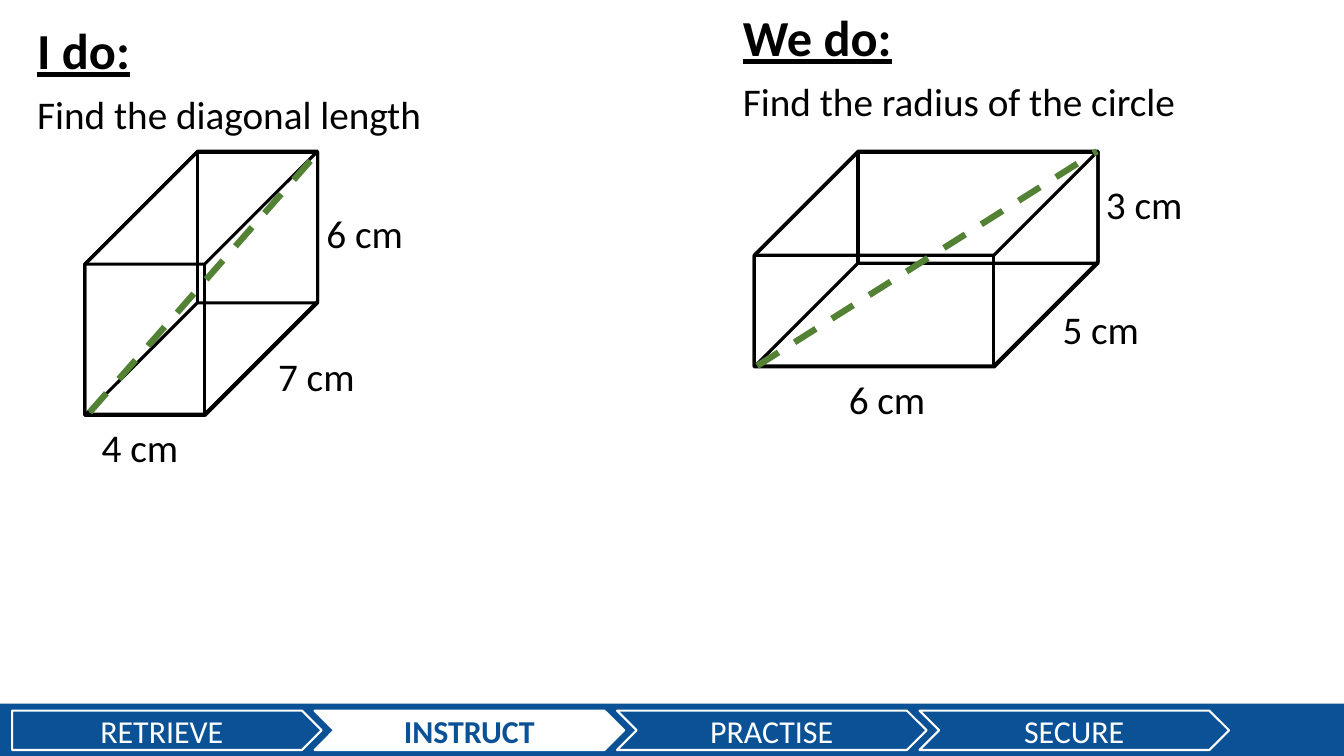
from dataclasses import dataclass

import pptx
import pptx.dml.color
import pptx.enum.dml
import pptx.enum.shapes
import pptx.enum.text
import pptx.util
from lxml import etree

Inches = pptx.util.Inches
Pt = pptx.util.Pt
Shape = pptx.enum.shapes.MSO_SHAPE
Align = pptx.enum.text.PP_ALIGN
Anchor = pptx.enum.text.MSO_ANCHOR


@dataclass(frozen=True)
class Theme:
    font: str = "Calibri"
    ink: str = "000000"
    blue: str = "0B5196"
    white: str = "FFFFFF"
    green: str = "548235"
    heading_size: float = 36
    body_size: float = 28
    step_size: float = 22.8
    step_line: float = 1.5
    edge_line: float = 2.25
    diagonal_line: float = 4.5


THEME = Theme()


def color(value):
    return pptx.dml.color.RGBColor.from_string(value)


def write(frame, text, size, ink=THEME.ink, align=Align.LEFT, **formats):
    para = frame.paragraphs[0]
    para.alignment = align
    span = para.add_run()
    span.text = text
    span.font.color.rgb = color(ink)
    formats = {"name": THEME.font, "size": Pt(size), **formats}
    for name, value in formats.items():
        setattr(span.font, name, value)


def add_text(page, left, top, width, height, text, size, wrap=True, **formats):
    box = page.shapes.add_textbox(Inches(left), Inches(top), Inches(width), Inches(height))
    box.text_frame.word_wrap = wrap
    box.text_frame.auto_size = pptx.enum.text.MSO_AUTO_SIZE.SHAPE_TO_FIT_TEXT
    write(box.text_frame, text, size, **formats)


def add_outline(shapes, kind, left, top, width, height, fill=None, line=None, weight=0):
    """Add a preset shape; without a fill or line colour that part is clear."""
    shape = shapes.add_shape(kind, Inches(left), Inches(top), Inches(width), Inches(height))
    shape.shadow.inherit = False
    if fill:
        shape.fill.solid()
        shape.fill.fore_color.rgb = color(fill)
    else:
        shape.fill.background()
    if line:
        shape.line.color.rgb = color(line)
        shape.line.width = Pt(weight)
    else:
        shape.line.fill.background()
    return shape


def add_steps(page, left, top, width, height, steps, current):
    """Draw the lesson bar with one arrow per step and the current one inverted."""
    add_outline(page.shapes, Shape.RECTANGLE, left, top, width, height, THEME.blue)
    for index, step in enumerate(steps):
        active = step == current
        fill, ink = (THEME.white, THEME.blue) if active else (THEME.blue, THEME.white)
        kind = Shape.CHEVRON if index else Shape.PENTAGON
        arrow = add_outline(page.shapes, kind, left + 0.12 + 3 * index, top + 0.07,
                            3.07, 0.39, fill, THEME.white, THEME.step_line)
        frame = arrow.text_frame
        frame.vertical_anchor = Anchor.MIDDLE
        frame.margin_top = frame.margin_bottom = 0
        write(frame, step, THEME.step_size, ink, Align.CENTER, bold=active)


def add_cuboid(page, left, top, width, height):
    """Draw a see-through cuboid as two cubes, one turned to show hidden edges."""
    group = page.shapes.add_group_shape()
    for offset, turn, depth in ((0, 0, 0.485), (0.01, 180, 0.483)):
        cube = add_outline(group.shapes, Shape.CUBE, left, top + offset, width, height,
                           line=THEME.ink, weight=THEME.edge_line)
        cube.rotation = turn
        cube.adjustments[0] = depth


def add_diagonal(page, start, end):
    line = page.shapes.add_connector(pptx.enum.shapes.MSO_CONNECTOR.STRAIGHT,
                                     *map(Inches, start + end))
    line.line.color.rgb = color(THEME.green)
    line.line.width = Pt(THEME.diagonal_line)
    line.line.dash_style = pptx.enum.dml.MSO_LINE.DASH
    properties = line._element.spPr
    etree.SubElement(properties, pptx.oxml.ns.qn("a:effectLst"))


def add_example(page, left, top, heading, task, task_width, cuboid, diagonal, labels):
    """Place a heading, its task and a cuboid, all relative to the top-left corner."""
    add_text(page, left, top, 3.61, 0.71, heading, THEME.heading_size,
             bold=True, underline=True)
    add_text(page, left, top + 0.71, task_width, 0.57, task, THEME.body_size)
    x, y, width, height = cuboid
    add_cuboid(page, left + x, top + y, width, height)
    start, end = [(left + across, top + down) for across, down in diagonal]
    add_diagonal(page, start, end)
    for text, across, down in labels:
        add_text(page, left + across, top + down, 0.97, 0.57, text,
                 THEME.body_size, wrap=False)


def main():
    deck = pptx.Presentation()
    deck.slide_width = Inches(13.33)
    deck.slide_height = Inches(7.5)
    page = deck.slides.add_slide(deck.slide_layouts[6])
    add_steps(page, 0, 6.98, 13.33, 0.52,
              ("RETRIEVE", "INSTRUCT", "PRACTISE", "SECURE"), "INSTRUCT")
    add_example(page, 0.27, 0.14, "I do:", "Find the diagonal length", 5.03,
                cuboid=(0.57, 1.36, 2.31, 2.61),
                diagonal=((0.62, 3.95), (2.84, 1.42)),
                labels=(("6 cm", 2.87, 1.89), ("4 cm", 0.64, 4.01), ("7 cm", 2.39, 3.31)))
    add_example(page, 7.27, 0.01, "We do:", "Find the radius of the circle", 5.34,
                cuboid=(0.21, 1.49, 3.41, 2.13),
                diagonal=((0.24, 3.62), (3.61, 1.49)),
                labels=(("3 cm", 3.6, 1.73), ("6 cm", 1.05, 3.66), ("5 cm", 3.17, 2.97)))
    deck.save("out.pptx")


if __name__ == "__main__":
    main()
